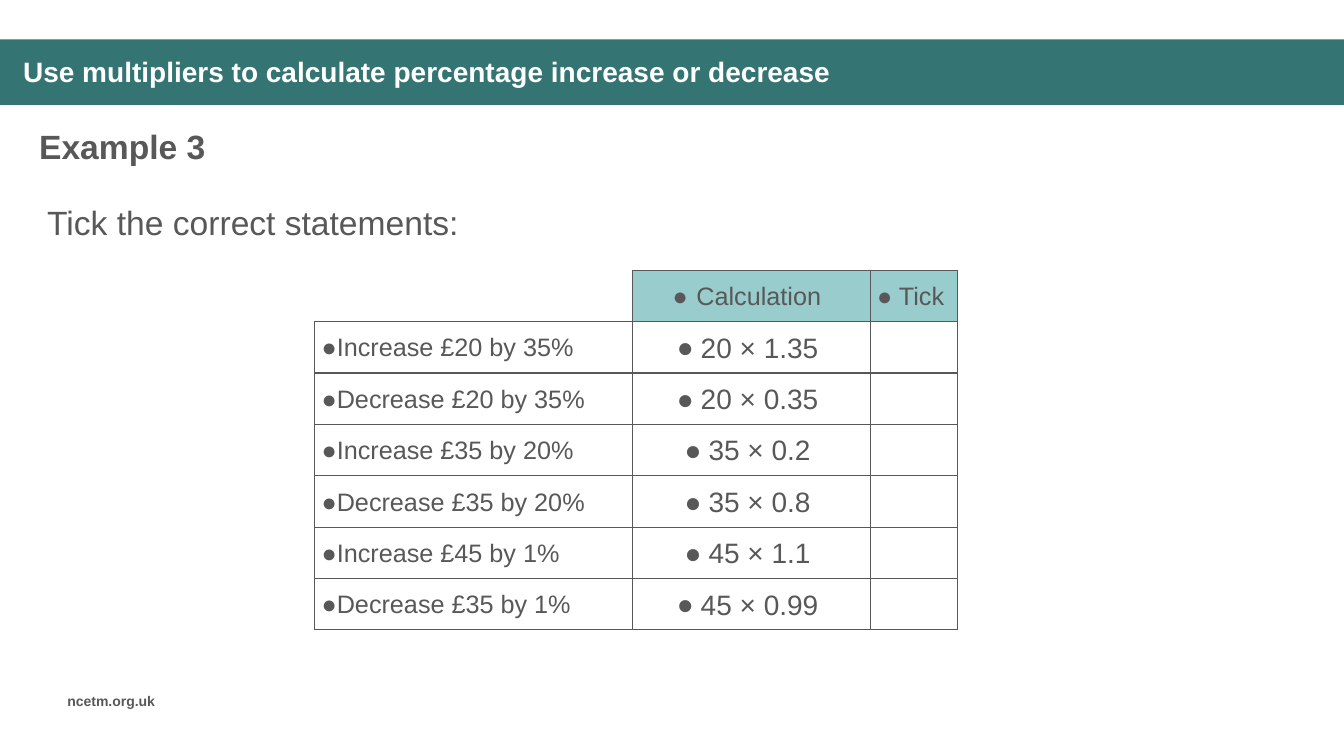
from lxml.etree import SubElement
from pptx import Presentation
from pptx.dml.color import RGBColor
from pptx.enum.shapes import MSO_SHAPE
from pptx.enum.text import MSO_ANCHOR, PP_ALIGN
from pptx.oxml import parse_xml
from pptx.oxml.ns import nsdecls, qn
from pptx.util import Inches, Pt

# Content
COLORS = {"teal": "347574", "header": "99CCCC", "text": "585858", "white": "FFFFFF"}
FONT = "Arial"
BANNER = (0, 0.39, 13.33, 0.65)
# text, (left, top, width, height), size, bold, color, anchor, line spacing
LABELS = [
    ("ncetm.org.uk", (0.57, 6.82, 1.21, 0.27), 10, True, "text", MSO_ANCHOR.TOP, 1),
    ("Use multipliers to calculate percentage increase or decrease",
     (0.13, 0.49, 11.58, 0.47), 20, True, "white", MSO_ANCHOR.MIDDLE, 0.9),
    ("Example 3", (0.29, 1.2, 6.66, 0.5), 24, True, "text", MSO_ANCHOR.TOP, 1),
    ("Tick the correct statements:", (0.37, 1.95, 6.67, 0.5), 24, False, "text",
     MSO_ANCHOR.TOP, 1),
]
STATEMENTS = [
    ("", "Calculation", "Tick"),
    ("Increase £20 by 35%", "20 × 1.35", ""),
    ("Decrease £20 by 35%", "20 × 0.35", ""),
    ("Increase £35 by 20%", "35 × 0.2", ""),
    ("Decrease £35 by 20%", "35 × 0.8", ""),
    ("Increase £45 by 1%", "45 × 1.1", ""),
    ("Decrease £35 by 1%", "45 × 0.99", ""),
]
TABLE_LEFT, TABLE_TOP, ROW_HEIGHT = 3.12, 2.68, 0.51
COLUMN_WIDTHS = [3.15, 2.36, 0.87]
CELL_FORMAT = {
    "vertical_anchor": MSO_ANCHOR.MIDDLE,
    "margin_left": Inches(0.07), "margin_right": Inches(0.07),
    "margin_top": 0, "margin_bottom": 0,
}


def rgb(name):
    return RGBColor.from_string(COLORS[name])


def apply(target, values):
    for key, value in values.items():
        setattr(target, key, value)


def write(paragraph, text, size, bold, color):
    run = paragraph.add_run()
    run.text = text
    apply(run.font, {"name": FONT, "size": Pt(size), "bold": bold})
    run.font.color.rgb = rgb(color)


def add_bullet(paragraph):
    properties = paragraph._p.get_or_add_pPr()
    color = SubElement(properties, qn("a:buClr"))
    SubElement(color, qn("a:srgbClr"), val=COLORS["text"])
    SubElement(properties, qn("a:buFont"), typeface=FONT)
    SubElement(properties, qn("a:buChar"), char="●")


def format_empty(paragraph, size):
    paragraph._p.append(parse_xml(
        f'<a:endParaRPr {nsdecls("a")} sz="{size * 100}"><a:solidFill>'
        f'<a:srgbClr val="{COLORS["text"]}"/></a:solidFill>'
        f'<a:latin typeface="{FONT}"/></a:endParaRPr>'))


def set_borders(cell, visible):
    properties = cell._tc.get_or_add_tcPr()
    for index, side in enumerate("LRTB"):
        paint = (f'<a:solidFill><a:srgbClr val="{COLORS["text"]}"/></a:solidFill>'
                 if side in visible else "<a:noFill/>")
        properties.insert(index, parse_xml(
            f'<a:ln{side} {nsdecls("a")} w="{Pt(1)}">{paint}</a:ln{side}>'))


presentation = Presentation()
apply(presentation, {"slide_width": Inches(13.33), "slide_height": Inches(7.5)})
slide = presentation.slides.add_slide(presentation.slide_layouts[6])

# Title banner
banner = slide.shapes.add_shape(MSO_SHAPE.RECTANGLE, *map(Inches, BANNER))
banner.shadow.inherit = False
banner.fill.solid()
banner.fill.fore_color.rgb = rgb("teal")
banner.line.fill.background()

# Footer, title, example heading and instruction
for text, place, size, bold, color, anchor, spacing in LABELS:
    frame = slide.shapes.add_textbox(*map(Inches, place)).text_frame
    apply(frame, {"word_wrap": True, "vertical_anchor": anchor})
    frame.paragraphs[0].line_spacing = spacing
    write(frame.paragraphs[0], text, size, bold, color)

# Table of statements
statements = slide.shapes.add_table(
    len(STATEMENTS), len(COLUMN_WIDTHS), Inches(TABLE_LEFT), Inches(TABLE_TOP),
    Inches(sum(COLUMN_WIDTHS)), Inches(ROW_HEIGHT * len(STATEMENTS))).table
apply(statements, {"first_row": False, "horz_banding": False})
for column, width in zip(statements.columns, COLUMN_WIDTHS):
    column.width = Inches(width)

for r, row in enumerate(STATEMENTS):
    statements.rows[r].height = Inches(ROW_HEIGHT)
    for c, text in enumerate(row):
        cell = statements.cell(r, c)
        apply(cell, CELL_FORMAT)
        if r == 0 and c > 0:
            cell.fill.solid()
            cell.fill.fore_color.rgb = rgb("header")
        else:
            cell.fill.background()
        set_borders(cell, "RB" if r == c == 0 else "LRTB")

        paragraph = cell.text_frame.paragraphs[0]
        apply(paragraph, {"alignment": PP_ALIGN.CENTER if c else PP_ALIGN.LEFT,
                          "line_spacing": 1.07})
        add_bullet(paragraph)
        size = 20 if r and c == 1 else 18
        if text:
            write(paragraph, text, size, False, "text")
        else:
            format_empty(paragraph, size)

presentation.save("out.pptx")
